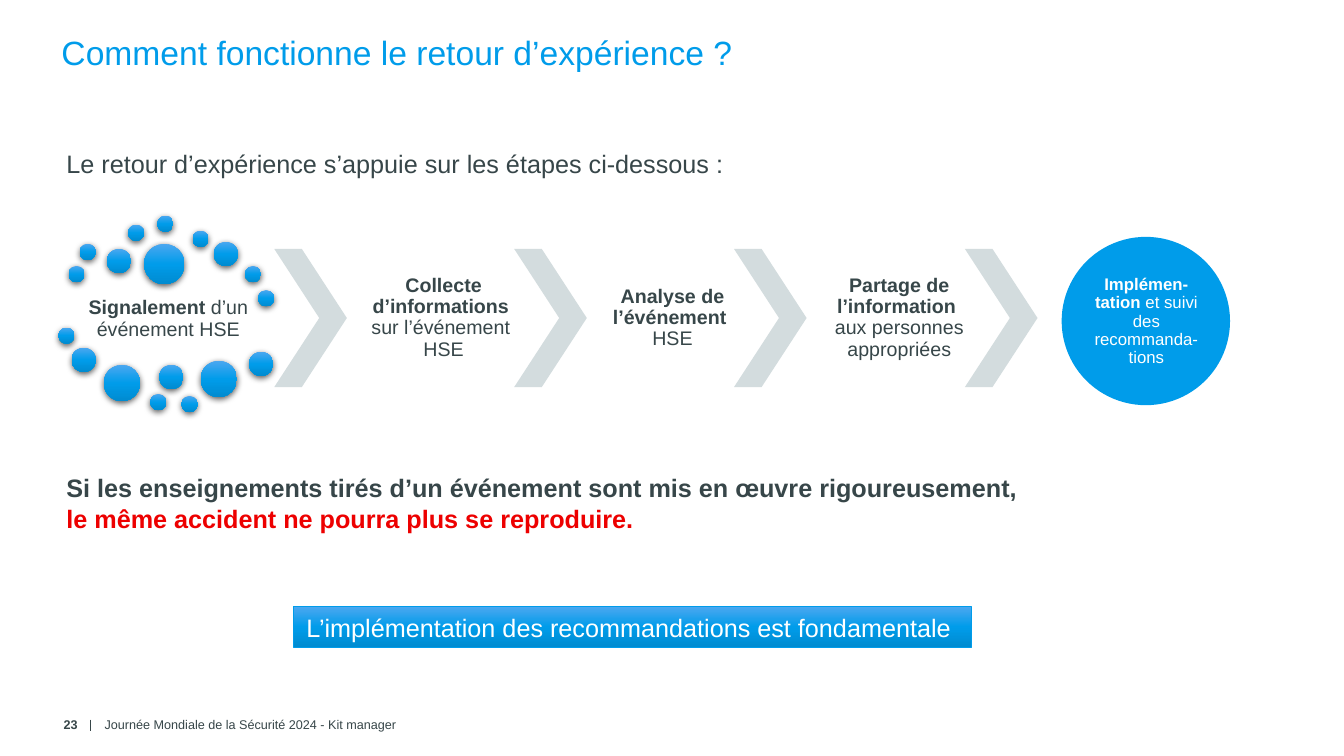
from copy import deepcopy

from lxml.etree import SubElement
from pptx import Presentation
from pptx.dml.color import RGBColor
from pptx.enum.shapes import MSO_CONNECTOR, MSO_SHAPE as SHAPE
from pptx.enum.text import MSO_ANCHOR as ANCHOR, MSO_AUTO_SIZE, PP_ALIGN as ALIGN
from pptx.oxml.ns import qn
from pptx.util import Emu, Pt

PX = 9144
FONT = "Arial"
BLUE = RGBColor(0x00, 0x9C, 0xEA)
SLATE = RGBColor(0x37, 0x46, 0x49)
GREY = RGBColor(0xD3, 0xDC, 0xDE)
RED = RGBColor(0xED, 0x00, 0x00)
WHITE = RGBColor(0xFF, 0xFF, 0xFF)
GRADIENT = [(0, RGBColor(0x4B, 0xA7, 0xF0)), (0.5, BLUE), (1, RGBColor(0x00, 0x8B, 0xD0))]

TITLE = "Comment fonctionne le retour d’expérience ?"
INTRO = "Le retour d’expérience s’appuie sur les étapes ci-dessous :"
CONCLUSION = [
    [("Si les enseignements tirés d’un événement sont mis en œuvre rigoureusement,", True)],
    [("le même accident ne pourra plus se reproduire.", True, RED)],
]
BANNER = "L’implémentation des recommandations est fondamentale "
FOOTER = "Journée Mondiale de la Sécurité 2024 - Kit manager"
NUMBER = "23"

SIGNAL = [[("Signalement ", True), ("d’un événement HSE", False)]]
STEPS = [
    (342, [[("Collecte d’informations ", True)], [("sur l’événement ", False)], [("HSE", False)]]),
    (569, [[("Analyse de l’événement ", True)], [("HSE", False)]]),
    (794, [[("Partage de l’information ", True)], [("aux personnes appropriées", False)]]),
]
FOLLOW_UP = [[("Implémen- tation ", True), ("et suivi des recommanda-tions", False)]]
CHEVRON_LEFTS = [272, 510, 728, 957]
BUBBLES = {
    16: [(68, 264), (79, 242), (127, 223), (156, 214), (191, 229), (243, 264),
         (256, 288), (58, 325), (149, 391), (180, 393)],
    24: [(106, 247), (212, 240), (71, 345), (158, 362), (247, 349)],
    36: [(103, 362), (199, 358)],
    40: [(143, 242)],
}
STEP_TOP, STEP_WIDTH, STEP_HEIGHT = 247, 196, 137


def place(left, top, width, height):
    """Turn px lengths into EMU."""
    return [Emu(length * PX) for length in (left, top, width, height)]


def write(frame, text, size=18, color=SLATE, bold=False, align=ALIGN.LEFT,
          anchor=ANCHOR.TOP, inset=None, spacing=None):
    """Fill a text frame with a string or with paragraphs of (text, bold, color) runs."""
    frame.word_wrap = True
    frame.auto_size = MSO_AUTO_SIZE.NONE
    frame.vertical_anchor = anchor
    if inset is not None:
        frame.margin_left = frame.margin_right = Emu(inset * PX)
        frame.margin_top = frame.margin_bottom = Emu(inset * PX)
    paragraphs = [[(text, bold)]] if isinstance(text, str) else text
    for index, runs in enumerate(paragraphs):
        para = frame.add_paragraph() if index else frame.paragraphs[0]
        para.alignment = align
        if spacing:
            para.line_spacing = spacing
        for words, weight, *tint in runs:
            span = para.add_run()
            span.text = words
            span.font.name = FONT
            span.font.size = Pt(size)
            span.font.bold = weight
            span.font.color.rgb = tint[0] if tint else color


def add_text(page, area, text, **style):
    """Add a text box."""
    write(page.shapes.add_textbox(*place(*area)).text_frame, text, **style)


def add_figure(page, kind, area, color=None):
    """Add a borderless shape, blue gradient unless a color is given."""
    figure = page.shapes.add_shape(kind, *place(*area))
    figure.shadow.inherit = False
    figure.line.fill.background()
    if color is not None:
        figure.fill.solid()
        figure.fill.fore_color.rgb = color
        return figure
    figure.fill.gradient()
    figure.fill.gradient_angle = 270
    stops = figure._element.spPr.find(qn("a:gradFill")).find(qn("a:gsLst"))
    stops.append(deepcopy(stops[0]))
    for stop, (position, tint) in zip(figure.fill.gradient_stops, GRADIENT):
        stop.position = position
        stop.color.rgb = tint
    return figure


def add_bubble(page, left, top, size):
    """Add a gradient disc with a soft shadow below."""
    bubble = add_figure(page, SHAPE.OVAL, (left, top, size, size))
    effects = bubble._element.spPr.find(qn("a:effectLst"))
    shadow = SubElement(effects, qn("a:outerShdw"), blurRad=str(Pt(4.5)), dist=str(Pt(1.5)),
                        dir="5400000", rotWithShape="0")
    black = SubElement(shadow, qn("a:srgbClr"), val="000000")
    SubElement(black, qn("a:alpha"), val="63000")


def add_footer(page):
    """Add the page number, the separator and the footer text."""
    bar = page.shapes.add_connector(MSO_CONNECTOR.STRAIGHT, *place(90, 714, 90, 725))
    bar.line.color.rgb = SLATE
    bar.line.width = Pt(1)
    SubElement(bar._element.spPr, qn("a:effectLst"))
    add_text(page, (94, 705, 394, 28), FOOTER, size=9, anchor=ANCHOR.MIDDLE)
    add_text(page, (24, 705, 63, 28), NUMBER, size=9, bold=True, align=ALIGN.RIGHT,
             anchor=ANCHOR.MIDDLE)


def add_process(page):
    """Add the bubbles, chevrons, step labels and final circle."""
    label = dict(align=ALIGN.CENTER, anchor=ANCHOR.MIDDLE, spacing=0.9)
    add_text(page, (69, 284, STEP_WIDTH, 65), SIGNAL, size=14, inset=2, **label)
    for size, corners in BUBBLES.items():
        for left, top in corners:
            add_bubble(page, left, top, size)
    for left in CHEVRON_LEFTS:
        chevron = add_figure(page, SHAPE.CHEVRON, (left, STEP_TOP, 72, STEP_HEIGHT), GREY)
        chevron.adjustments[0] = 0.62
    for left, text in STEPS:
        add_text(page, (left, STEP_TOP, STEP_WIDTH, STEP_HEIGHT), text, size=14, inset=2, **label)
    add_figure(page, SHAPE.OVAL, (1053, 235, 167, 167), BLUE)
    add_text(page, (1078, 260, 118, 118), FOLLOW_UP, size=12, color=WHITE, inset=0, **label)


def main():
    """Build the slide and save it."""
    deck = Presentation()
    deck.slide_width, deck.slide_height = Emu(1333 * PX), Emu(750 * PX)
    page = deck.slides.add_slide(deck.slide_layouts[5])
    title = page.shapes.title
    title.left, title.top, title.width, title.height = place(51, 27, 1063, 110)
    write(title.text_frame, TITLE, size=24, color=BLUE)
    add_footer(page)
    add_text(page, (56, 142, 1111, 40), INTRO)
    add_text(page, (56, 464, 1111, 70), CONCLUSION)
    add_process(page)
    banner = add_figure(page, SHAPE.RECTANGLE, (291, 602, 672, 40))
    banner.line.color.rgb = BLUE
    banner.line.width = Pt(0.5)
    write(banner.text_frame, BANNER, color=WHITE, align=ALIGN.CENTER, anchor=ANCHOR.MIDDLE)
    deck.save("out.pptx")


if __name__ == "__main__":
    main()
